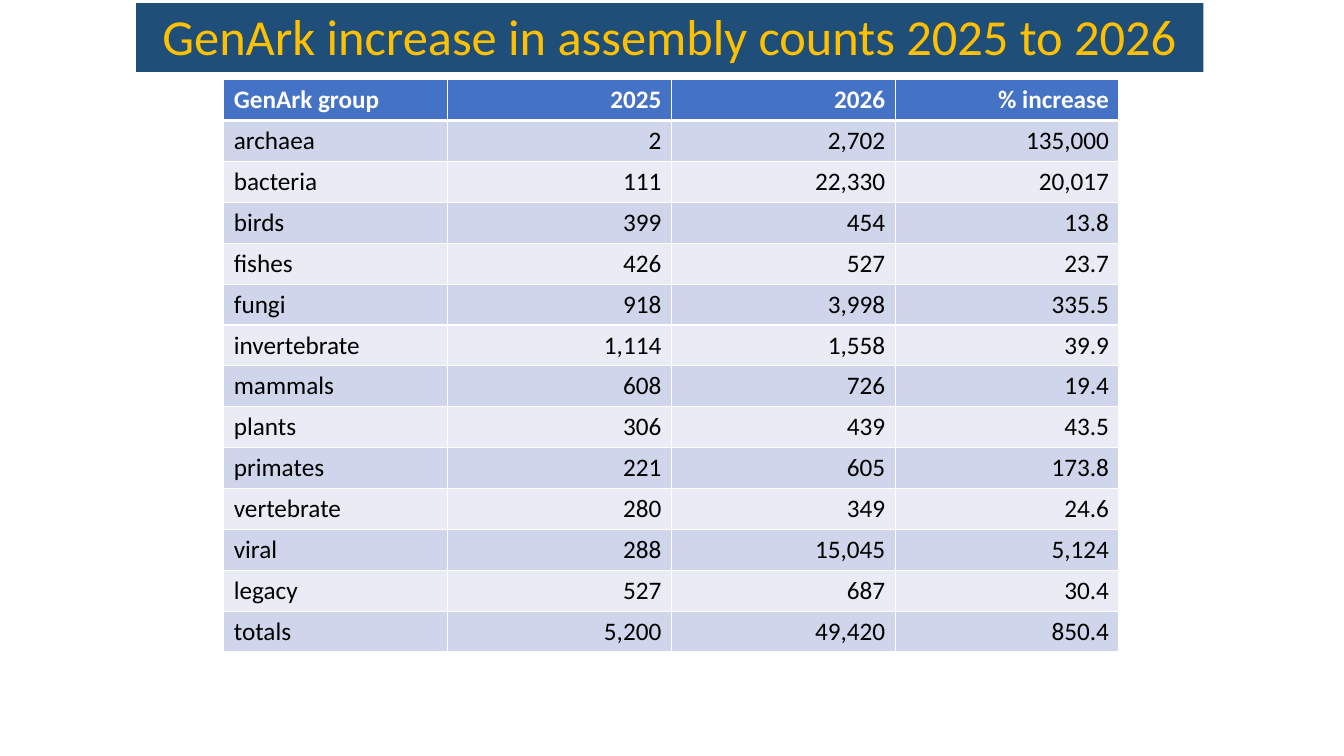
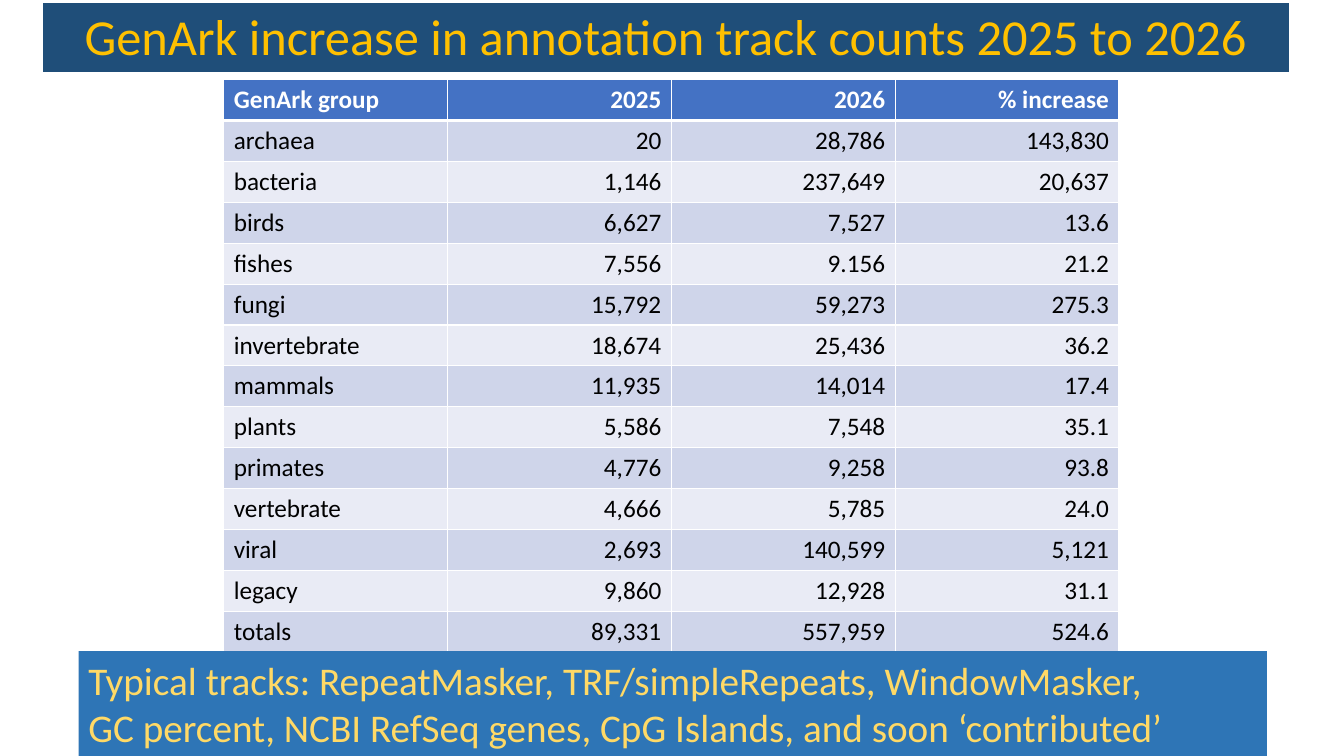
"""Build two slides on the growth of GenArk assemblies and annotation tracks."""
import dataclasses

import lxml.etree
import pptx
import pptx.dml.color
import pptx.enum.shapes
import pptx.enum.text
import pptx.oxml.ns
import pptx.presentation
import pptx.slide
import pptx.table
import pptx.util

Cm = pptx.util.Cm
Pt = pptx.util.Pt
qn = pptx.oxml.ns.qn
ALIGN = pptx.enum.text.PP_ALIGN
ANCHOR = pptx.enum.text.MSO_ANCHOR

FONT = "Calibri"
TITLE_FILL, TITLE_TEXT = "1F4E79", "FFC000"
NOTE_FILL, NOTE_TEXT = "2E75B6", "FFD966"
HEADER_FILL, ROW_FILLS = "4472C4", ("CFD5EA", "E9EBF5")
WHITE, BLACK = "FFFFFF", "000000"

HEADER = ("GenArk group", "2025", "2026", "% increase")
GROUPS = ("archaea", "bacteria", "birds", "fishes", "fungi", "invertebrate", "mammals",
          "plants", "primates", "vertebrate", "viral", "legacy", "totals")
TABLE_LEFT, TABLE_TOP = 5.64, 2.01
COL_WIDTH, ROW_HEIGHT = 5.64, 1.03


@dataclasses.dataclass(frozen=True)
class Band:
    left: float
    top: float
    width: float
    height: float
    fill: str
    color: str
    size: int
    lines: tuple[str, ...]
    align: ALIGN = ALIGN.LEFT
    anchor: ANCHOR = ANCHOR.TOP
    spacing: float = 1.0


@dataclasses.dataclass(frozen=True)
class CountSlide:
    bands: tuple[Band, ...]
    counts: tuple[tuple[str, str, str], ...]


def title_band(text: str, left: float, width: float) -> Band:
    return Band(left, 0.08, width, 1.73, TITLE_FILL, TITLE_TEXT, 36, (text,),
                ALIGN.CENTER, ANCHOR.BOTTOM, 0.9)


SLIDES = (
    CountSlide(
        (title_band("GenArk increase in assembly counts 2025 to 2026", 3.43, 26.9),),
        (
            ("2", "2,702", "135,000"),
            ("111", "22,330", "20,017"),
            ("399", "454", "13.8"),
            ("426", "527", "23.7"),
            ("918", "3,998", "335.5"),
            ("1,114", "1,558", "39.9"),
            ("608", "726", "19.4"),
            ("306", "439", "43.5"),
            ("221", "605", "173.8"),
            ("280", "349", "24.6"),
            ("288", "15,045", "5,124"),
            ("527", "687", "30.4"),
            ("5,200", "49,420", "850.4"),
        ),
    ),
    CountSlide(
        (
            title_band("GenArk increase in annotation track counts 2025 to 2026", 1.09, 31.39),
            Band(1.98, 16.41, 29.95, 2.64, NOTE_FILL, NOTE_TEXT, 28, (
                "Typical tracks: RepeatMasker, TRF/simpleRepeats, WindowMasker,",
                "GC percent, NCBI RefSeq genes, CpG Islands, and soon ‘contributed’",
            )),
        ),
        (
            ("20", "28,786", "143,830"),
            ("1,146", "237,649", "20,637"),
            ("6,627", "7,527", "13.6"),
            ("7,556", "9.156", "21.2"),
            ("15,792", "59,273", "275.3"),
            ("18,674", "25,436", "36.2"),
            ("11,935", "14,014", "17.4"),
            ("5,586", "7,548", "35.1"),
            ("4,776", "9,258", "93.8"),
            ("4,666", "5,785", "24.0"),
            ("2,693", "140,599", "5,121"),
            ("9,860", "12,928", "31.1"),
            ("89,331", "557,959", "524.6"),
        ),
    ),
)


def rgb(value: str) -> pptx.dml.color.RGBColor:
    return pptx.dml.color.RGBColor.from_string(value)


def format_runs(p, size: int, color: str, bold: bool = False) -> None:
    for r in p.runs:
        r.font.name = FONT
        r.font.size = Pt(size)
        r.font.bold = bold
        r.font.color.rgb = rgb(color)


def add_band(s: pptx.slide.Slide, band: Band) -> None:
    sp = s.shapes.add_shape(pptx.enum.shapes.MSO_SHAPE.RECTANGLE, Cm(band.left),
                            Cm(band.top), Cm(band.width), Cm(band.height))
    sp.shadow.inherit = False
    sp.fill.solid()
    sp.fill.fore_color.rgb = rgb(band.fill)
    sp.line.fill.background()
    tf = sp.text_frame
    tf.word_wrap = True
    tf.vertical_anchor = band.anchor
    tf.text = "\n".join(band.lines)
    for p in tf.paragraphs:
        p.alignment = band.align
        p.line_spacing = band.spacing
        format_runs(p, band.size, band.color)


def set_borders(cell: pptx.table._Cell, top: int, bottom: int) -> None:
    tc_pr = cell._tc.get_or_add_tcPr()
    for side, width in (("L", 1), ("R", 1), ("T", top), ("B", bottom)):
        ln = lxml.etree.SubElement(tc_pr, qn(f"a:ln{side}"), w=str(Pt(width)))
        fill = lxml.etree.SubElement(ln, qn("a:solidFill"))
        lxml.etree.SubElement(fill, qn("a:srgbClr"), val=WHITE)


def add_counts(s: pptx.slide.Slide, counts: tuple[tuple[str, str, str], ...]) -> None:
    rows = [HEADER] + [(group, *values) for group, values in zip(GROUPS, counts, strict=True)]
    table = s.shapes.add_table(len(rows), len(HEADER), Cm(TABLE_LEFT), Cm(TABLE_TOP),
                               Cm(COL_WIDTH * len(HEADER)), Cm(ROW_HEIGHT * len(rows))).table
    for column in table.columns:
        column.width = Cm(COL_WIDTH)
    for i, values in enumerate(rows):
        table.rows[i].height = Cm(ROW_HEIGHT)
        is_header = i == 0
        for j, value in enumerate(values):
            cell = table.cell(i, j)
            set_borders(cell, top=3 if i == 1 else 1, bottom=3 if is_header else 1)
            cell.fill.solid()
            cell.fill.fore_color.rgb = rgb(HEADER_FILL if is_header else ROW_FILLS[(i - 1) % 2])
            p = cell.text_frame.paragraphs[0]
            p.text = value
            p.alignment = ALIGN.RIGHT if j else ALIGN.LEFT
            format_runs(p, 18, WHITE if is_header else BLACK, is_header)


def add_count_slide(prs: pptx.presentation.Presentation, content: CountSlide) -> None:
    s = prs.slides.add_slide(prs.slide_layouts[6])
    add_counts(s, content.counts)
    for band in content.bands:
        add_band(s, band)


def main() -> None:
    prs = pptx.Presentation()
    prs.slide_width, prs.slide_height = Cm(33.87), Cm(19.05)
    for content in SLIDES:
        add_count_slide(prs, content)
    prs.save("out.pptx")


if __name__ == "__main__":
    main()
